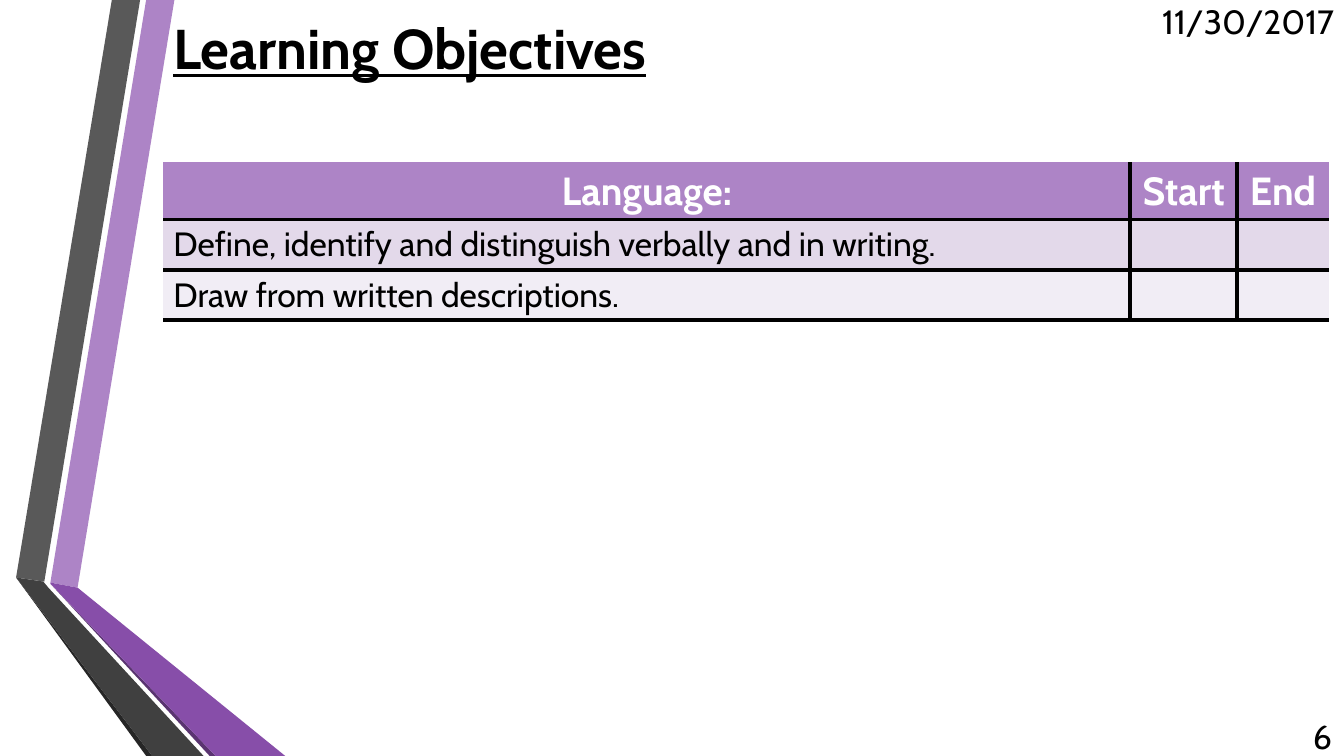
from lxml import etree
from pptx import Presentation
from pptx.dml.color import RGBColor
from pptx.enum.text import MSO_ANCHOR, PP_ALIGN
from pptx.oxml.ns import qn
from pptx.util import Inches, Pt

LEFT, MID, RIGHT = PP_ALIGN.LEFT, PP_ALIGN.CENTER, PP_ALIGN.RIGHT
CENTER = MSO_ANCHOR.MIDDLE
TOP = MSO_ANCHOR.TOP
FONT = "Cabin"
HEX = {
    "black": "000000", "white": "FFFFFF", "lilac": "AD84C6",
    "violet": "874EA9", "plum": "5A3471", "gray": "595959",
    "coal": "404040", "soot": "262626", "band": "E3D9EA", "pale": "F1EDF5",
}
BANDS = [
    ("lilac", [(0.5, 5.78), (0.77, 5.83), (1.73, 0), (1.45, 0)]),
    ("gray", [(1.39, 0), (1.11, 0), (0.16, 5.73), (0.44, 5.77)]),
    ("soot", [(0.16, 5.73), (1.45, 7.5), (1.51, 7.5)]),
    ("plum", [(0.5, 5.79), (2.08, 7.5), (2.14, 7.5)]),
    ("violet", [(0.5, 5.79), (2.14, 7.5), (2.83, 7.5), (0.77, 5.83), (0.5, 5.78)]),
    ("coal", [(2.02, 7.5), (0.48, 5.83), (0.43, 5.77), (0.16, 5.73), (1.51, 7.5)]),
]
LABELS = [
    ("Learning Objectives", (1.62, 0.01, 10.96, 0.92), LEFT,
     {"size": Pt(40), "bold": True, "underline": True}),
    ("11/30/2017", (11.29, 0.01, 2.04, 0.4), RIGHT, {"size": Pt(24)}),
    ("6", (12.58, 7.1, 0.73, 0.4), RIGHT, {"size": Pt(24)}),
]
GOALS = [
    ("Language:", "Start", "End"),
    ("Define, identify and distinguish verbally and in writing.", "", ""),
    ("Draw from written descriptions.", "", ""),
]
WIDTHS = [9.59, 1.06, 0.91]
HEIGHTS = [0.56, 0.5, 0.5]
FILLS = ["lilac", "band", "pale"]


def color(name):
    return RGBColor.from_string(HEX[name])


def style(font, tint, form):
    font.name = FONT
    font.color.rgb = color(tint)
    for key, value in form.items():
        setattr(font, key, value)


def add_band(slide, tint, points):
    pen = slide.shapes.build_freeform(
        Inches(points[0][0]), Inches(points[0][1]))
    pen.add_line_segments([(Inches(x), Inches(y)) for x, y in points[1:]])
    shape = pen.convert_to_shape()
    shape.shadow.inherit = False
    shape.fill.solid()
    shape.fill.fore_color.rgb = color(tint)
    shape.line.fill.background()


def add_label(slide, text, area, align, form):
    frame = slide.shapes.add_textbox(*map(Inches, area)).text_frame
    frame.word_wrap = True
    frame.vertical_anchor = CENTER
    para = frame.paragraphs[0]
    para.alignment = align
    run = para.add_run()
    run.text = text
    style(run.font, "black", form)


def set_edges(cell, shown):
    props = cell._tc.get_or_add_tcPr()
    for spot, side in enumerate("LRTB"):
        edge = etree.Element(qn(f"a:ln{side}"), w=str(Pt(3)))
        if side in shown:
            fill = etree.SubElement(edge, qn("a:solidFill"))
            etree.SubElement(fill, qn("a:srgbClr"), val=HEX["black"])
        else:
            etree.SubElement(edge, qn("a:noFill"))
        props.insert(spot, edge)


def fill_cell(cell, text, row, col):
    head = row == 0
    cell.fill.solid()
    cell.fill.fore_color.rgb = color(FILLS[row])
    cell.vertical_anchor = CENTER if head else TOP
    para = cell.text_frame.paragraphs[0]
    para.alignment = MID if head else LEFT
    form = {"size": Pt(28 if head else 24), "bold": head}
    style(para.font, "white" if head else "black", form)
    if text:
        run = para.add_run()
        run.text = text
        style(run.font, "white" if head else "black", form)
    shown = "B"
    if row > 0:
        shown += "T"
    if col > 0:
        shown += "L"
    if col < len(WIDTHS) - 1:
        shown += "R"
    set_edges(cell, shown)


def add_goals(slide):
    table = slide.shapes.add_table(
        len(GOALS), len(WIDTHS), Inches(1.62), Inches(1.61),
        Inches(sum(WIDTHS)), Inches(sum(HEIGHTS))).table
    table.first_row = False
    table.horz_banding = False
    for col, width in zip(table.columns, WIDTHS):
        col.width = Inches(width)
    for row, height in zip(table.rows, HEIGHTS):
        row.height = Inches(height)
    for row, texts in enumerate(GOALS):
        for col, text in enumerate(texts):
            fill_cell(table.cell(row, col), text, row, col)


def main():
    deck = Presentation()
    deck.slide_width = Inches(13.33)
    deck.slide_height = Inches(7.5)
    slide = deck.slides.add_slide(deck.slide_layouts[6])
    for band in BANDS:
        add_band(slide, *band)
    for label in LABELS:
        add_label(slide, *label)
    add_goals(slide)
    deck.save("out.pptx")


if __name__ == "__main__":
    main()
